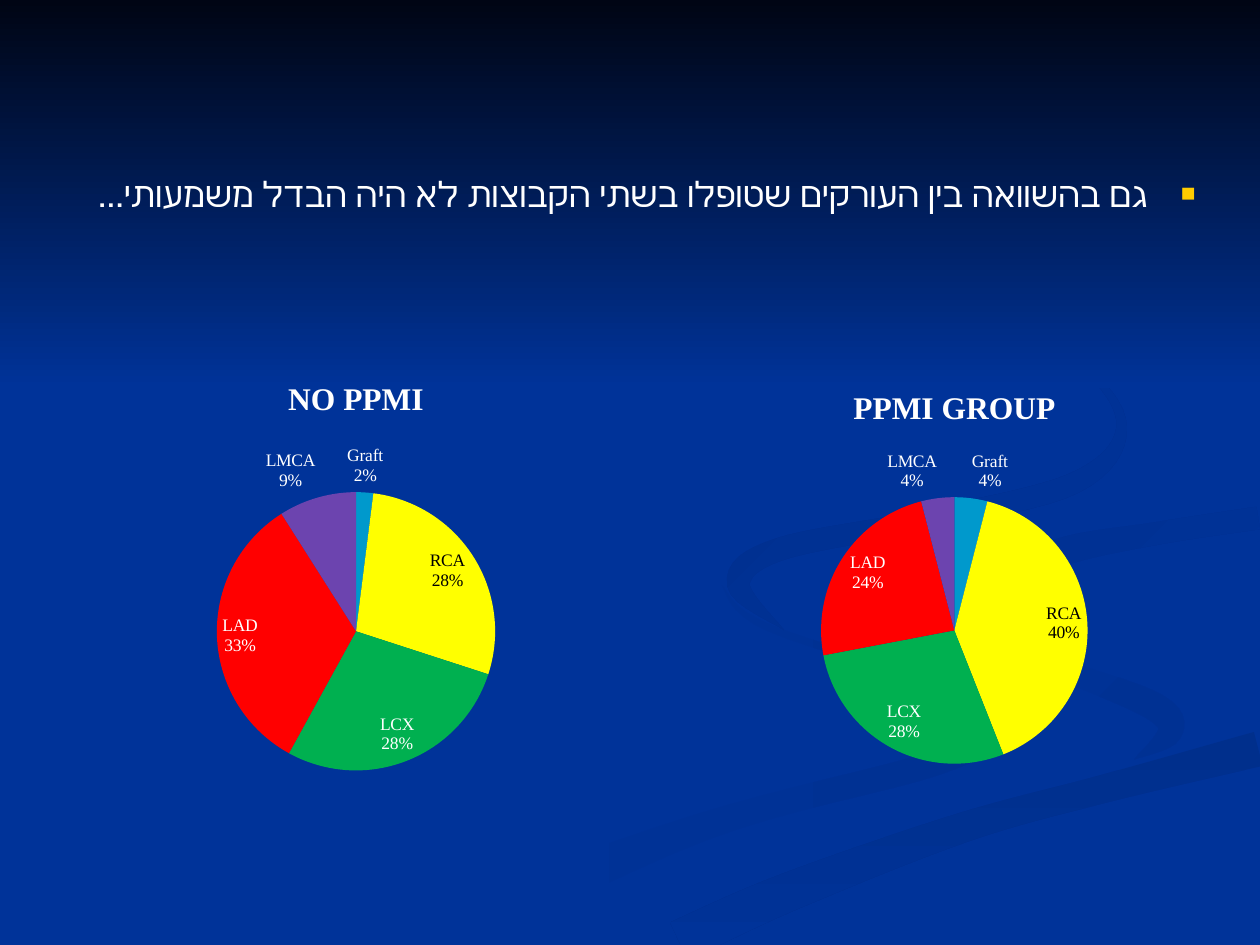
from dataclasses import dataclass
from math import hypot

from lxml import etree
from pptx import Presentation
from pptx.chart.data import CategoryChartData
from pptx.dml.color import RGBColor
from pptx.enum.chart import XL_CHART_TYPE, XL_LABEL_POSITION
from pptx.enum.lang import MSO_LANGUAGE_ID
from pptx.enum.shapes import MSO_SHAPE
from pptx.enum.text import PP_ALIGN
from pptx.oxml.ns import qn
from pptx.util import Pt

PIE = XL_CHART_TYPE.PIE
BEST_FIT = XL_LABEL_POSITION.BEST_FIT
RECTANGLE = MSO_SHAPE.RECTANGLE
RIGHT = PP_ALIGN.RIGHT
HEBREW = MSO_LANGUAGE_ID.HEBREW

NAVY = "003399"
WHITE = "FFFFFF"
BLACK = "000000"
VESSEL_COLORS = {
    "Graft": "0099CC",
    "RCA": "FFFF00",
    "LCX": "00B050",
    "LAD": "FF0000",
    "LMCA": "6C44AF",
}


@dataclass
class Swirl:
    start: str
    end: str
    angle: int
    nodes: list  # (x, y, thickness) along the centre line


SWIRLS = [
    Swirl(NAVY, "003193", 0, [
        (412, 334, 0), (440, 359, 4), (565, 400, 4), (570, 416, 12),
        (535, 436, 14), (400, 473, 16), (238, 539, 34)]),
    Swirl(NAVY, "003193", 45, [
        (522, 335, 0), (545, 361, 8), (610, 384, 12), (660, 404, 16),
        (668, 419, 14), (648, 434, 0)]),
    Swirl("002F8C", NAVY, 90, [
        (388, 538, 24), (450, 510, 22), (550, 473, 17), (630, 451, 16),
        (719, 428, 20)]),
    Swirl("003091", NAVY, 45, [
        (592, 356, 0), (571, 336, 14), (605, 316, 16), (660, 305, 13),
        (719, 296, 13)]),
    Swirl("002F8E", NAVY, 45, [
        (549, 168, 0), (616, 207, 3), (641, 244, 6), (614, 276, 12),
        (530, 297, 12), (445, 314, 13), (422, 334, 13), (448, 360, 0)]),
]


def color(value):
    return RGBColor.from_string(value)


def smooth_curve(nodes, steps=8):
    padded = [nodes[0], *nodes, nodes[-1]]
    curve = []
    for before, first, second, after in zip(padded, padded[1:], padded[2:], padded[3:]):
        for step in range(steps):
            t = step / steps
            curve.append(tuple(
                b + ((c - a) * t + (2 * a - 5 * b + 4 * c - d) * t ** 2
                     + (3 * b - a - 3 * c + d) * t ** 3) / 2
                for a, b, c, d in zip(before, first, second, after)))
    return curve + [nodes[-1]]


def brush_outline(nodes):
    curve = smooth_curve(nodes)
    left_side, right_side = [], []
    neighbours = zip([curve[0], *curve], curve, [*curve[1:], curve[-1]])
    for previous, (x, y, thickness), following in neighbours:
        run, rise = following[0] - previous[0], following[1] - previous[1]
        reach = max(thickness, 0) / 2 / hypot(run, rise)
        left_side.append((x - rise * reach, y + run * reach))
        right_side.append((x + rise * reach, y - run * reach))
    return left_side + right_side[::-1]


class Deck:
    font_name = "Times New Roman"

    def __init__(self):
        self.deck = Presentation()
        self.deck.slide_width, self.deck.slide_height = Pt(720), Pt(540)
        self.page = self.deck.slides.add_slide(self.deck.slide_layouts[1])
        title = self.page.shapes.title._element
        title.getparent().remove(title)
        background = self.page.background.fill
        background.solid()
        background.fore_color.rgb = color(NAVY)

    def style(self, font, size, value, bold=False):
        font.name, font.size, font.bold = self.font_name, Pt(size), bold
        font.color.rgb = color(value)

    def shade(self, shape, start, end, angle):
        shape.shadow.inherit = False
        shape.line.fill.background()
        shape.fill.gradient()
        shape.fill.gradient_angle = (360 - angle) % 360
        for stop, value in zip(shape.fill.gradient_stops, (start, end)):
            stop.color.rgb = color(value)

    def swirl(self, swirl):
        first, *others = [(Pt(x), Pt(y)) for x, y in brush_outline(swirl.nodes)]
        builder = self.page.shapes.build_freeform(*first)
        builder.add_line_segments(others, close=True)
        self.shade(builder.convert_to_shape(), swirl.start, swirl.end, swirl.angle)

    def top_shade(self, height):
        band = self.page.shapes.add_shape(RECTANGLE, 0, 0, Pt(720), Pt(height))
        self.shade(band, "000514", NAVY, 90)

    def bullet_text(self, text, left, top, width, height):
        box = self.page.placeholders[1]
        self.page.shapes._spTree.append(box._element)
        box.left, box.top, box.width, box.height = map(Pt, (left, top, width, height))
        para = box.text_frame.paragraphs[0]
        para.alignment = RIGHT
        para.space_before = Pt(0)
        properties = para._p.get_or_add_pPr()
        for name, value in (("marL", Pt(27)), ("indent", Pt(-27)), ("rtl", 1)):
            properties.set(name, str(int(value)))
        bullet_color = etree.SubElement(properties, qn("a:buClr"))
        etree.SubElement(bullet_color, qn("a:srgbClr"), val="FFCC00")
        etree.SubElement(properties, qn("a:buSzPct"), val="70000")
        etree.SubElement(properties, qn("a:buFont"), typeface=self.font_name)
        etree.SubElement(properties, qn("a:buChar"), char="■")
        span = para.add_run()
        span.text = text
        span.font.language_id = HEBREW
        self.style(span.font, 20, WHITE)

    def pie(self, title, values, left, top, width, height, plot):
        data = CategoryChartData()
        data.categories = list(VESSEL_COLORS)
        data.add_series("Series 1", values)
        chart = self.page.shapes.add_chart(
            PIE, *map(Pt, (left, top, width, height)), data).chart
        self.style(chart.font, 10, WHITE)
        chart.has_legend = False
        chart.has_title = True
        span = chart.chart_title.text_frame.paragraphs[0].add_run()
        span.text = title
        self.style(span.font, 18, WHITE, bold=True)
        self.place_plot(chart, plot)

        pie = chart.plots[0]
        pie.vary_by_categories = True
        series = pie.series[0]
        labels = series.data_labels
        labels.show_value = False
        labels.show_percentage = labels.show_category_name = True
        labels.position = BEST_FIT
        self.style(labels.font, 10, WHITE)
        for index, (vessel, value) in enumerate(VESSEL_COLORS.items()):
            point = series.points[index]
            point.format.fill.solid()
            point.format.fill.fore_color.rgb = color(value)
            if vessel == "RCA":
                self.dark_label(point.data_label)

    def dark_label(self, label):
        self.style(label.font, 10, BLACK)
        label.position = BEST_FIT
        element = label._get_or_add_dLbl()
        for name, shown in (("showVal", "0"), ("showCatName", "1"), ("showPercent", "1")):
            element.find(qn("c:" + name)).set("val", shown)

    def place_plot(self, chart, plot):
        area = chart._chartSpace.find(".//" + qn("c:plotArea"))
        for old in area.findall(qn("c:layout")):
            area.remove(old)
        layout = etree.Element(qn("c:layout"))
        manual = etree.SubElement(layout, qn("c:manualLayout"))
        settings = [("layoutTarget", "inner"), ("xMode", "edge"), ("yMode", "edge")]
        settings += zip("xywh", map(str, plot))
        for name, value in settings:
            etree.SubElement(manual, qn("c:" + name), val=value)
        area.insert(0, layout)


def main():
    slide = Deck()
    for swirl in SWIRLS:
        slide.swirl(swirl)
    slide.top_shade(221.76)
    slide.bullet_text("גם בהשוואה בין העורקים שטופלו בשתי הקבוצות לא היה הבדל משמעותי...",
                      42.5, 95, 648, 356.4)
    slide.pie("PPMI GROUP", (4, 40, 28, 24, 4), 398.9, 210.2, 293, 238.3,
              (0.24, 0.31, 0.52, 0.64))
    slide.pie("NO PPMI", (2, 28, 28, 33, 9), 56.2, 204.5, 294.5, 246.2,
              (0.23, 0.31, 0.54, 0.65))
    slide.deck.save("out.pptx")


if __name__ == "__main__":
    main()
